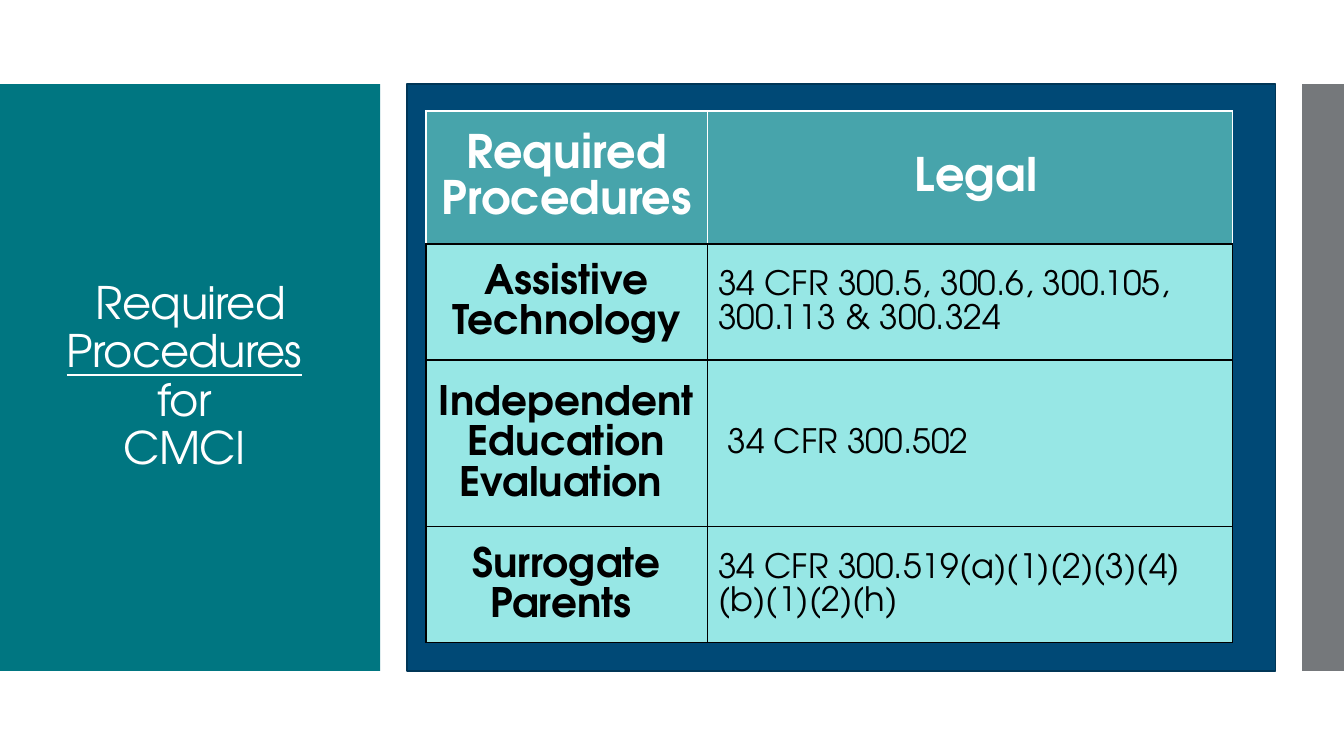
from pptx import Presentation
from pptx import util as u
from pptx.dml.color import RGBColor
from pptx.enum import shapes, text
from pptx.oxml import parse_xml
from pptx.oxml.ns import nsdecls

PX = 9071  # EMU per px, at 100.8 px to the inch
FONT = "TeX Gyre Adventor"
WHITE = RGBColor(0xFF, 0xFF, 0xFF)
BLACK = RGBColor(0, 0, 0)
NAVY = RGBColor(0x00, 0x49, 0x76)
NAVY_EDGE = RGBColor(0x00, 0x36, 0x57)
TEAL = RGBColor(0x00, 0x76, 0x81)
GREY = RGBColor(0x75, 0x78, 0x7B)
HEADER_TEAL = RGBColor(0x47, 0xA4, 0xAB)
AQUA = RGBColor(0x97, 0xE7, 0xE5)


def set_font(font, size, color, bold=False):
    font.name, font.size, font.bold = FONT, u.Pt(size), bold
    font.color.rgb = color


def set_border(cell, side, color):
    cell._tc.get_or_add_tcPr().append(parse_xml(
        f'<a:{side} {nsdecls("a")} w="12700"><a:solidFill>'
        f'<a:srgbClr val="{color}"/></a:solidFill></a:{side}>'))


prs = Presentation()
prs.slide_width, prs.slide_height = u.Inches(13.33), u.Inches(7.5)
slide = prs.slides.add_slide(prs.slide_layouts[5])

# Background panels
for left, width, color in ((407, 868, NAVY), (0, 380, TEAL), (1302, 42, GREY)):
    panel = slide.shapes.add_shape(shapes.MSO_SHAPE.RECTANGLE,
                                   left * PX, 84 * PX, width * PX, 587 * PX)
    panel.shadow.inherit = False
    panel.fill.solid()
    panel.fill.fore_color.rgb = color
    if color == NAVY:
        panel.line.color.rgb = NAVY_EDGE
        panel.line.width = u.Pt(0.85)
    else:
        panel.line.fill.background()

# Title, moved in front of the panels
title = slide.shapes.title
slide.shapes._spTree.append(title._element)
title.left, title.top, title.width, title.height = (n * PX for n in (28, 124, 325, 507))
frame = title.text_frame
frame.word_wrap = True
frame.auto_size = text.MSO_AUTO_SIZE.NONE
frame.vertical_anchor = text.MSO_ANCHOR.MIDDLE
heading = frame.paragraphs[0]
heading.alignment = text.PP_ALIGN.CENTER
heading.line_spacing = 0.9
for i, words in enumerate(("Required ", "Procedures", " \vfor \vCMCI ")):
    for j, part in enumerate(words.split("\v")):
        if j:
            heading.add_line_break()
        run = heading.add_run()
        run.text = part
        set_font(run.font, 32, WHITE)
        run.font.underline = i == 1
        run.font._element.set("spc", "-60")

# Table of procedures
rows = (
    (133, "Required Procedures", "\u00a0Legal"),
    (116, "Assistive Technology", "34 CFR 300.5, 300.6, 300.105, 300.113 & 300.324"),
    (167, "Independent Education Evaluation ", " 34 CFR 300.502"),
    (116, "Surrogate Parents ", "34 CFR 300.519(a)(1)(2)(3)(4)(b)(1)(2)(h)"),
)
procedures = slide.shapes.add_table(len(rows), 2, 426 * PX, 111 * PX,
                                    806 * PX, 532 * PX).table
for column, width in zip(procedures.columns, (281, 525)):
    column.width = width * PX
for r, (height, *entries) in enumerate(rows):
    procedures.rows[r].height = height * PX
    header = r == 0
    for c, entry in enumerate(entries):
        cell = procedures.cell(r, c)
        cell.text = entry
        cell.vertical_anchor = text.MSO_ANCHOR.MIDDLE
        cell.margin_left = cell.margin_right = 11 * PX
        cell.margin_top = cell.margin_bottom = 6 * PX
        for side in ("lnL", "lnR", "lnT", "lnB"):
            set_border(cell, side, WHITE if header and side != "lnB" else BLACK)
        cell.fill.solid()
        cell.fill.fore_color.rgb = HEADER_TEAL if header else AQUA
        line = cell.text_frame.paragraphs[0]
        centred = header or c == 0
        line.alignment = text.PP_ALIGN.CENTER if centred else text.PP_ALIGN.LEFT
        line.line_spacing = 1.07
        line.space_after = u.Pt(8)
        set_font(line.font, 33 if header else 29 if c == 0 else 24,
                 WHITE if header else BLACK, bold=centred)

prs.save("out.pptx")
